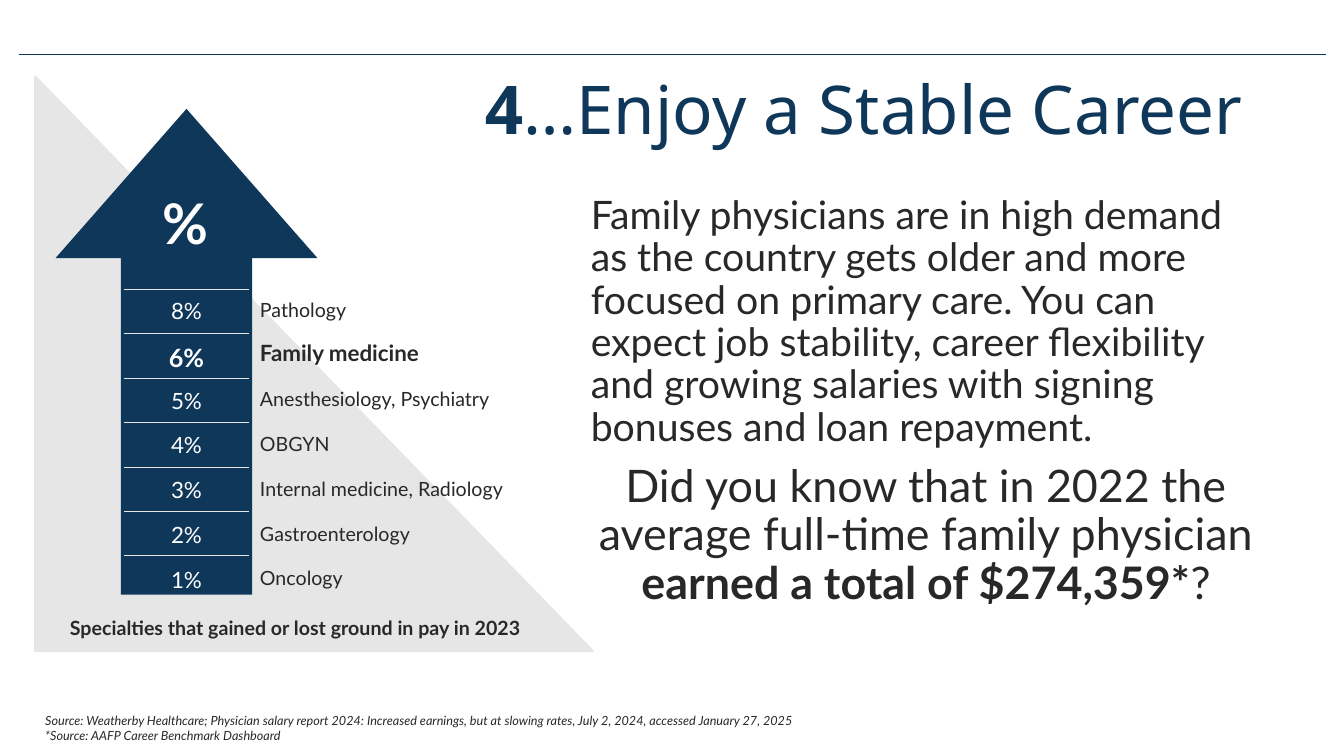
"""Build the slide about stable careers and specialty pay growth."""
from lxml.etree import SubElement
from pptx import Presentation
from pptx.dml.color import RGBColor
from pptx.enum.shapes import MSO_CONNECTOR, MSO_SHAPE
from pptx.enum.text import MSO_ANCHOR, MSO_AUTO_SIZE, PP_ALIGN
from pptx.oxml.ns import qn
from pptx.util import Inches, Pt

COLORS = {"navy": "0F3759", "gray": "E7E6E6", "text": "282828", "white": "FFFFFF"}

TITLE = [("4", True), ("…Enjoy a Stable Career", False)]
DEMAND = [("Family physicians are in high demand as the country gets older and more focused on "
           "primary care. You can expect job stability, career flexibility and growing salaries "
           "with signing bonuses and loan repayment.", False)]
EARNINGS = [("Did you know that in 2022 the average full-time family physician ", False),
            ("earned a total of $274,359*", True), ("?", False)]
GAINS = [
    ("8%", "Pathology", 2.51),
    ("6%", "Family medicine", 3.64),
    ("5%", "Anesthesiology, Psychiatry", 2.78),
    ("4%", "OBGYN", 1.54),
    ("3%", "Internal medicine, Radiology", 2.75),
    ("2%", "Gastroenterology", 2.15),
    ("1%", "Oncology", 1.97),
]
HIGHLIGHT = "Family medicine"
CAPTION = "Specialties that gained or lost ground in pay in 2023"
SOURCES = [
    "Source: Weatherby Healthcare; Physician salary report 2024: Increased earnings, "
    "but at slowing rates, July 2, 2024, accessed January 27, 2025",
    "*Source: AAFP Career Benchmark Dashboard",
]

RULE_TOP, RULE_PITCH = 2.87, 0.44
VALUE_TOP, LABEL_TOP, TEXT_PITCH = 2.9, 2.93, 0.444


def color(name):
    return RGBColor.from_string(COLORS[name])


def box(*lengths):
    return [Inches(length) for length in lengths]


def write(paragraph, runs, size, tint="text", font="Lato", align=PP_ALIGN.LEFT,
          spacing=None, before=0, italic=False):
    paragraph.alignment = align
    paragraph.line_spacing = spacing
    paragraph.space_before = Pt(before)
    for text, bold in runs:
        run = paragraph.add_run()
        run.text = text
        run.font.name, run.font.size = font, Pt(size)
        run.font.bold, run.font.italic = bold, italic
        run.font.color.rgb = color(tint)


def add_text(shapes, place, text, size, bold=False, **style):
    frame = shapes.add_textbox(*box(*place)).text_frame
    frame.word_wrap = True
    write(frame.paragraphs[0], [(text, bold)], size, **style)
    return frame


def add_block(shapes, preset, place, fill, border=None):
    shape = shapes.add_shape(preset, *box(*place))
    shape.shadow.inherit = False
    shape.fill.solid()
    shape.fill.fore_color.rgb = color(fill)
    if border:
        shape.line.color.rgb = color(fill)
        shape.line.width = Pt(border)
    else:
        shape.line.fill.background()
    return shape


def add_rule(shapes, left, right, top, tint, width):
    rule = shapes.add_connector(MSO_CONNECTOR.STRAIGHT, *box(left, top, right, top))
    rule.line.color.rgb = color(tint)
    rule.line.width = Pt(width)
    SubElement(rule.element.spPr, qn("a:effectLst"))


def place_holder(shape, place):
    shape.left, shape.top, shape.width, shape.height = box(*place)
    frame = shape.text_frame
    frame.word_wrap = True
    frame.auto_size = MSO_AUTO_SIZE.NONE
    frame.vertical_anchor = MSO_ANCHOR.TOP
    return frame


def fill_body(frame):
    for index, (runs, size, align) in enumerate(
            [(DEMAND, 28, PP_ALIGN.LEFT), (EARNINGS, 32, PP_ALIGN.CENTER)]):
        paragraph = frame.add_paragraph() if index else frame.paragraphs[0]
        properties = paragraph._p.get_or_add_pPr()
        properties.set("marL", "0")
        properties.set("indent", "0")
        SubElement(properties, qn("a:buNone"))
        write(paragraph, runs, size, align=align, spacing=0.9, before=10 * index)


def add_pay_graphic(shapes):
    add_block(shapes, MSO_SHAPE.RIGHT_TRIANGLE, (0.35, 0.76, 5.53, 5.7), "gray", 1.5)
    arrow = add_block(shapes, MSO_SHAPE.UP_ARROW, (0.55, 1.08, 2.6, 4.82), "navy")
    arrow.adjustments[0], arrow.adjustments[1] = 0.5, 0.57
    for row, (value, label, width) in enumerate(GAINS):
        bold = label == HIGHLIGHT
        extra = 2 if bold else 0
        add_text(shapes, (1.47, VALUE_TOP + row * TEXT_PITCH, 0.76, 0.42), value, 16 + extra,
                 bold, tint="white", align=PP_ALIGN.CENTER)
        add_text(shapes, (2.48, LABEL_TOP + row * TEXT_PITCH, width, 0.31), label, 14 + extra,
                 bold, spacing=Pt(15))
        add_rule(shapes, 1.23, 2.47, RULE_TOP + row * RULE_PITCH, "gray", 0.25)
    add_text(shapes, (1.35, 1.82, 0.98, 0.87), "%", 40, True, tint="white",
             align=PP_ALIGN.CENTER)
    caption = add_block(shapes, MSO_SHAPE.RECTANGLE, (0.35, 6.06, 5.16, 0.34), "gray")
    caption.text_frame.word_wrap = True
    write(caption.text_frame.paragraphs[0], [(CAPTION, True)], 14, align=PP_ALIGN.CENTER)


def main():
    presentation = Presentation()
    presentation.slide_width, presentation.slide_height = box(13.33, 7.5)
    slide = presentation.slides.add_slide(presentation.slide_layouts[1])
    title = place_holder(slide.shapes.title, (0.92, 0.71, 11.5, 1.45))
    write(title.paragraphs[0], TITLE, 48, "navy", "Noto Sans", PP_ALIGN.RIGHT, 0.9)
    fill_body(place_holder(slide.placeholders[1], (5.76, 1.89, 6.85, 4.73)))
    add_rule(slide.shapes, 0.19, 13.15, 0.54, "navy", 0.5)
    add_pay_graphic(slide.shapes.add_group_shape().shapes)
    sources = add_text(slide.shapes, (0.35, 7.02, 8.53, 0.41), SOURCES[0], 9, italic=True)
    write(sources.add_paragraph(), [(SOURCES[1], False)], 9, italic=True)
    presentation.save("out.pptx")


if __name__ == "__main__":
    main()
